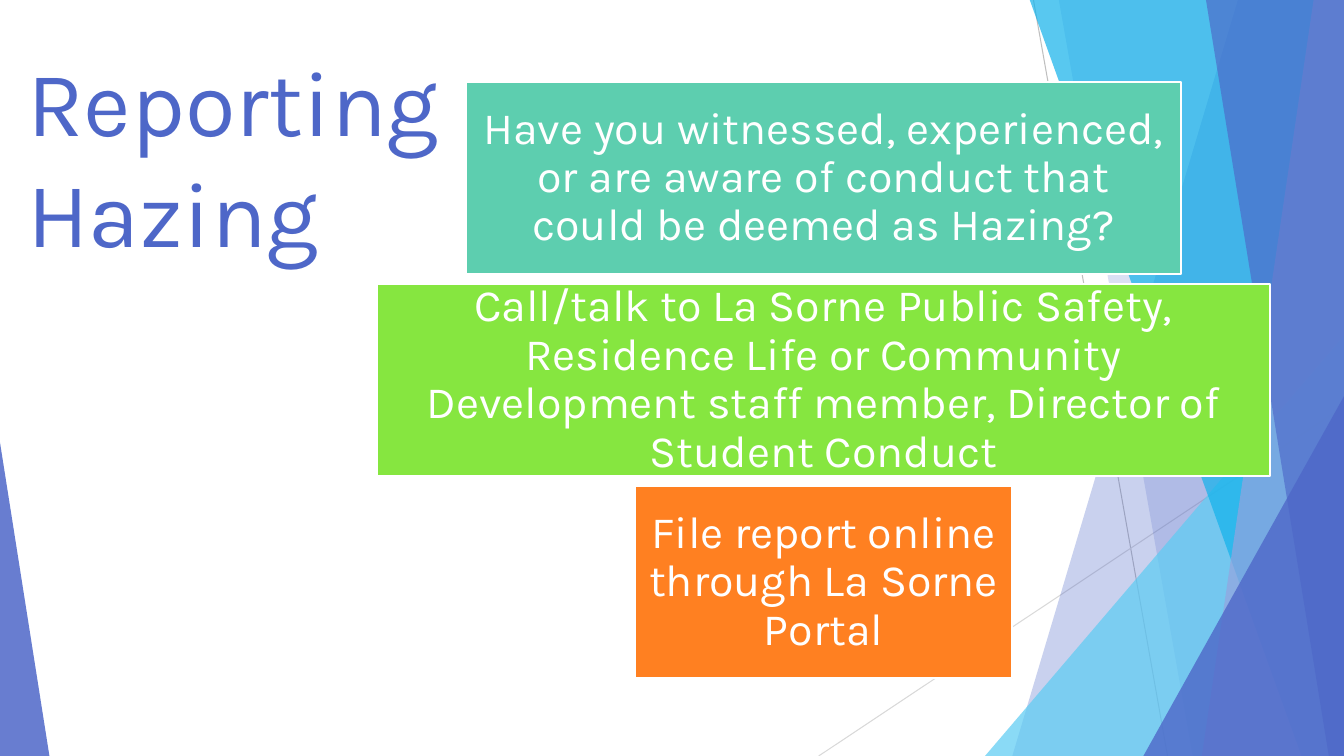
from dataclasses import dataclass

from lxml import etree
from pptx import Presentation
from pptx import util as u
from pptx.dml.color import RGBColor
from pptx.enum import shapes as s, text as t
from pptx.oxml.ns import qn

WIDE, HIGH, TOP = 13.33, 7.5, -0.01
FONT = "Karla"
HUES = {
    "blue": "4E67C8", "pale": "95A4DE", "sky": "5ECCF3", "cyan": "12B2EB",
    "teal": "5DCEAF", "green": "86E640", "orange": "FF8021",
    "white": "FFFFFF", "gray": "BFBFBF", "light": "D9D9D9",
}


@dataclass
class Ray:
    start: tuple[float, float]
    end: tuple[float, float]
    hue: str


@dataclass
class Band:
    """Full-height band from a slanted left edge to the slide's right edge."""
    top: float
    foot: float
    hue: str
    alpha: int


@dataclass
class Wedge:
    left: float
    top: float
    width: float
    lean: int
    hue: str
    alpha: int


@dataclass
class Step:
    width: float
    hue: str
    words: str


RAYS = [
    Ray((10.25, 0), (11.58, HIGH), "gray"),
    Ray((WIDE, 4.03), (8.12, HIGH), "light"),
]
DECOR = [
    Band(12.28, 10.04, "blue", 30),
    Band(10.5, 11.83, "blue", 20),
    Wedge(9.77, 3.33, 3.56, 1, "sky", 72),
    Band(10.21, 12.91, "cyan", 70),
    Band(13.03, 11.92, "pale", 70),
    Band(11.96, 13.18, "blue", 65),
    Wedge(11.34, 3.93, 1.99, 1, "blue", 80),
    Wedge(0, 4.39, 0.49, 0, "blue", 85),
]
STEPS = [
    Step(7.09, "teal", "Have you witnessed, experienced, or are aware of "
                       "conduct that could be deemed as Hazing?"),
    Step(8.86, "green", "Call/talk to La Sorne Public Safety, Residence Life "
                        "or Community Development staff member, Director of "
                        "Student Conduct"),
    Step(3.74, "orange", "File report online through La Sorne Portal"),
]
MID, FIRST, PITCH, TALL = 8.17, 0.81, 2.005, 1.91


def color(hue: str) -> RGBColor:
    return RGBColor.from_string(HUES[hue])


def paint(shape, hue: str, alpha: int = 100) -> None:
    shape.shadow.inherit = False
    shape.fill.solid()
    shape.fill.fore_color.rgb = color(hue)
    shape.line.fill.background()
    if alpha < 100:
        tint = shape.fill._xPr.find(".//" + qn("a:srgbClr"))
        etree.SubElement(tint, qn("a:alpha"), val=str(alpha * 1000))


def style(part, size: int, hue: str) -> None:
    for run in part.runs:
        run.font.name = FONT
        run.font.size = u.Pt(size)
        run.font.color.rgb = color(hue)


def draw_ray(tree, ray: Ray) -> None:
    ends = [u.Inches(n) for n in ray.start + ray.end]
    line = tree.add_connector(s.MSO_CONNECTOR.STRAIGHT, *ends)
    line.line.color.rgb = color(ray.hue)
    line.line.width = u.Pt(0.75)
    etree.SubElement(line._element.spPr, qn("a:effectLst"))


def draw_band(tree, band: Band) -> None:
    spots = [(band.top, TOP), (WIDE, TOP), (WIDE, HIGH), (band.foot, HIGH)]
    spots = [(u.Inches(x), u.Inches(y)) for x, y in spots]
    pen = tree.build_freeform(*spots[0])
    pen.add_line_segments(spots[1:], close=True)
    paint(pen.convert_to_shape(), band.hue, band.alpha)


def draw_wedge(tree, wedge: Wedge) -> None:
    shape = tree.add_shape(
        s.MSO_SHAPE.ISOSCELES_TRIANGLE, u.Inches(wedge.left),
        u.Inches(wedge.top), u.Inches(wedge.width),
        u.Inches(HIGH - wedge.top))
    shape.adjustments[0] = wedge.lean
    paint(shape, wedge.hue, wedge.alpha)


def draw_step(tree, step: Step, row: int) -> None:
    box = tree.add_shape(
        s.MSO_SHAPE.RECTANGLE, u.Inches(MID - step.width / 2),
        u.Inches(FIRST + row * PITCH), u.Inches(step.width), u.Inches(TALL))
    paint(box, step.hue)
    box.line.color.rgb = color("white")
    box.line.width = u.Pt(1.5)
    frame = box.text_frame
    frame.word_wrap = True
    frame.vertical_anchor = t.MSO_ANCHOR.MIDDLE
    frame.margin_left = frame.margin_right = u.Inches(0.09)
    frame.margin_top = frame.margin_bottom = u.Inches(0.09)
    frame.text = step.words
    part = frame.paragraphs[0]
    part.alignment = t.PP_ALIGN.CENTER
    part.line_spacing = 0.9
    style(part, 32, "white")


def draw_title(slide) -> None:
    title = slide.shapes.title
    title.left, title.top = u.Inches(0.17), u.Inches(0.39)
    title.width, title.height = u.Inches(9.4), u.Inches(1.44)
    frame = title.text_frame
    frame.auto_size = t.MSO_AUTO_SIZE.NONE
    frame.vertical_anchor = t.MSO_ANCHOR.TOP
    frame.text = "Reporting\vHazing"
    part = frame.paragraphs[0]
    part.alignment = t.PP_ALIGN.LEFT
    style(part, 66, "blue")


def main() -> None:
    deck = Presentation()
    deck.slide_width, deck.slide_height = u.Inches(WIDE), u.Inches(HIGH)
    slide = deck.slides.add_slide(deck.slide_layouts[5])
    tree = slide.shapes

    # Background rays, bands and wedges
    for ray in RAYS:
        draw_ray(tree, ray)
    for item in DECOR:
        if isinstance(item, Band):
            draw_band(tree, item)
        else:
            draw_wedge(tree, item)

    # Title and the three steps
    draw_title(slide)
    for row, step in enumerate(STEPS):
        draw_step(tree, step, row)

    deck.save("out.pptx")


if __name__ == "__main__":
    main()
